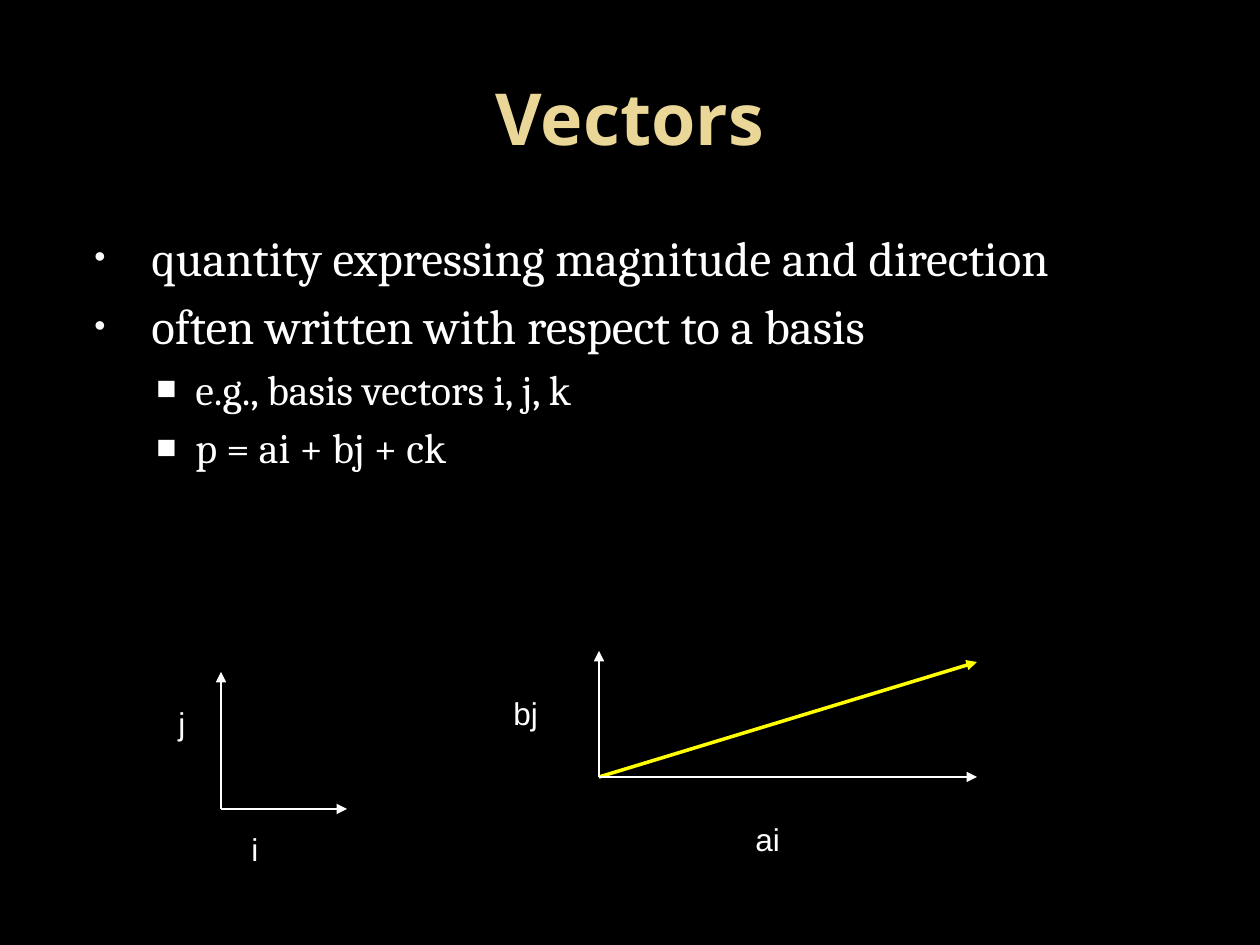
from dataclasses import dataclass

from lxml.etree import SubElement
from pptx import Presentation
from pptx.dml.color import RGBColor
from pptx.enum.shapes import MSO_CONNECTOR
from pptx.enum.text import MSO_ANCHOR, MSO_AUTO_SIZE, PP_ALIGN
from pptx.oxml.ns import qn
from pptx.util import Pt

SCALE = 914400 / 126


def px(n):
    return round(n * SCALE)


@dataclass(frozen=True)
class Level:
    size: int
    left: int
    hang: int
    mark: str
    tint: str
    ratio: int


@dataclass(frozen=True)
class Theme:
    back: str = "000000"
    gold: str = "EAD696"
    white: str = "FFFFFF"
    yellow: str = "FFFF00"
    head: str = "Noto Sans"
    body: str = "Cambria"
    note: str = "Arial"
    title: int = 41
    label: int = 18
    thin: float = 0.75
    thick: float = 2
    levels: tuple = (
        Level(28, 76, 57, "•", "F9F9F9", 65),
        Level(24, 120, 39, "■", "FFFFFF", 80),
    )


class Deck:
    def __init__(self, theme):
        self.theme = theme
        self.file = Presentation()
        self.file.slide_width, self.file.slide_height = px(1260), px(945)
        self.slide = self.file.slides.add_slide(self.file.slide_layouts[5])
        fill = self.slide.background.fill
        fill.solid()
        fill.fore_color.rgb = RGBColor.from_string(theme.back)

    def style(self, para, face, size, tint, bold=False):
        for run in para.runs:
            font = run.font
            font.name, font.size, font.bold = face, Pt(size), bold
            font.color.rgb = RGBColor.from_string(tint)

    def title(self, text, *box):
        shape = self.slide.shapes.title
        shape.left, shape.top, shape.width, shape.height = map(px, box)
        frame = shape.text_frame
        frame.text = text
        frame.auto_size = MSO_AUTO_SIZE.NONE
        frame.vertical_anchor = MSO_ANCHOR.MIDDLE
        para = frame.paragraphs[0]
        para.alignment = PP_ALIGN.CENTER
        self.style(para, self.theme.head, self.theme.title, self.theme.gold, True)

    def bullet(self, para, level):
        """Give a paragraph its indent, relative space before and mark."""
        props = para._p.get_or_add_pPr()
        props.set("marL", str(px(level.left)))
        props.set("indent", str(-px(level.hang)))
        space = SubElement(props, qn("a:spcBef"))
        SubElement(space, qn("a:spcPct"), val="20000")
        tint = SubElement(props, qn("a:buClr"))
        SubElement(tint, qn("a:srgbClr"), val=level.tint)
        SubElement(props, qn("a:buSzPct"), val=str(level.ratio * 1000))
        SubElement(props, qn("a:buFont"), typeface=self.theme.note)
        SubElement(props, qn("a:buChar"), char=level.mark)

    def points(self, items, *box):
        frame = self.slide.shapes.add_textbox(*map(px, box)).text_frame
        frame.word_wrap = True
        frame.text = "\n".join(text for _, text in items)
        for para, (depth, _) in zip(frame.paragraphs, items):
            level = self.theme.levels[depth]
            para.level = depth
            self.bullet(para, level)
            self.style(para, self.theme.body, level.size, self.theme.white)

    def arrow(self, start, end, tint, width):
        line = self.slide.shapes.add_connector(
            MSO_CONNECTOR.STRAIGHT, *map(px, start + end))
        line.line.color.rgb = RGBColor.from_string(tint)
        line.line.width = Pt(width)
        SubElement(line.line._get_or_add_ln(), qn("a:tailEnd"), type="triangle")
        SubElement(line._element.spPr, qn("a:effectLst"))

    def axes(self, x, y, wide, high):
        for end in ((x, y - high), (x + wide, y)):
            self.arrow((x, y), end, self.theme.white, self.theme.thin)

    def label(self, text, *box):
        frame = self.slide.shapes.add_textbox(*map(px, box)).text_frame
        frame.word_wrap = False
        frame.auto_size = MSO_AUTO_SIZE.SHAPE_TO_FIT_TEXT
        frame.text = text
        self.style(frame.paragraphs[0], self.theme.note, self.theme.label,
                   self.theme.white)

    def save(self):
        self.file.save("out.pptx")


def main():
    theme = Theme()
    deck = Deck(theme)
    deck.title("Vectors", 63, 38, 1134, 157)
    deck.points([
        (0, "quantity expressing magnitude and direction"),
        (0, "often written with respect to a basis"),
        (1, "e.g., basis vectors i, j, k"),
        (1, "p = ai + bj + ck"),
    ], 63, 221, 1134, 649)
    deck.arrow((599, 777), (977, 662), theme.yellow, theme.thick)
    deck.axes(221, 809, 126, 137)
    deck.axes(599, 777, 378, 126)
    for text, x, y, wide in (("i", 239, 824, 33), ("j", 166, 698, 33),
                             ("ai", 743, 814, 50), ("bj", 501, 688, 50)):
        deck.label(text, x, y, wide, 50)
    deck.save()


if __name__ == "__main__":
    main()
